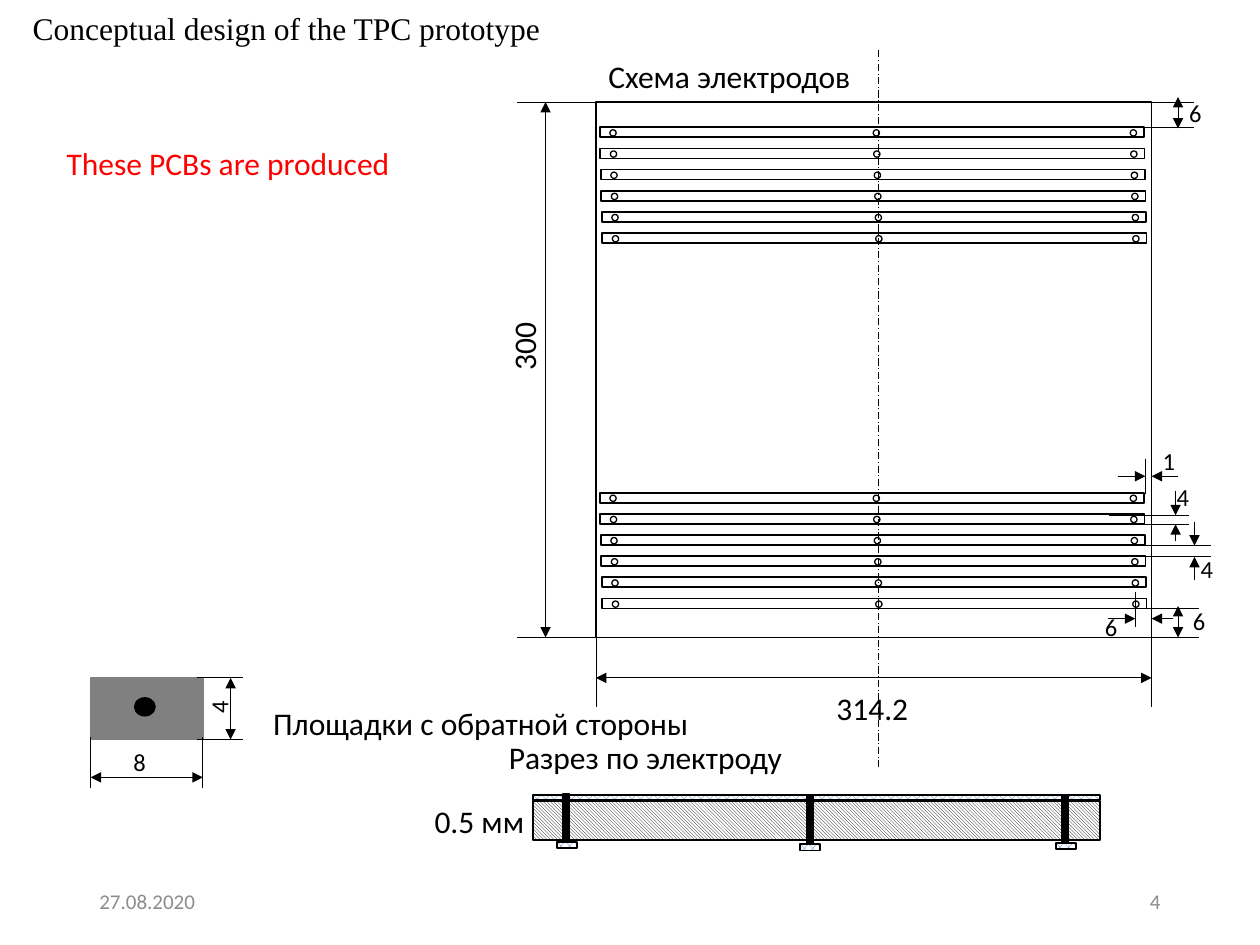
from lxml.etree import SubElement
from pptx import Presentation
from pptx.dml.color import RGBColor
from pptx.enum.dml import MSO_LINE, MSO_PATTERN
from pptx.enum.shapes import MSO_CONNECTOR, MSO_SHAPE
from pptx.enum.text import MSO_ANCHOR, MSO_AUTO_SIZE, PP_ALIGN
from pptx.oxml.ns import qn
from pptx.util import Inches, Pt

COLORS = {"ink": "000000", "paper": "FFFFFF", "copper": "4472C4",
          "pad": "808080", "note": "FF0000", "muted": "8C8C8C"}
ENDS = {"": (), "to": ("a:tailEnd",), "both": ("a:headEnd", "a:tailEnd")}
STRIPES = (MSO_PATTERN.DARK_DOWNWARD_DIAGONAL, "ink")
DOTS = (MSO_PATTERN.PERCENT_50, "copper")


def rgb(name):
    return RGBColor.from_string(COLORS[name])


def add_shape(s, x, y, w, h, kind=MSO_SHAPE.RECTANGLE, fill=None, pattern=None,
              line="ink", weight=1):
    sp = s.shapes.add_shape(kind, Inches(x), Inches(y), Inches(w), Inches(h))
    sp.shadow.inherit = False
    if pattern:
        sp.fill.patterned()
        sp.fill.pattern = pattern[0]
        sp.fill.fore_color.rgb = rgb(pattern[1])
        sp.fill.back_color.rgb = rgb("paper")
    elif fill:
        sp.fill.solid()
        sp.fill.fore_color.rgb = rgb(fill)
    else:
        sp.fill.background()
    sp.line.color.rgb = rgb(line)
    sp.line.width = Pt(weight)
    return sp


def add_line(s, x1, y1, x2, y2, arrows="", dash=None):
    c = s.shapes.add_connector(MSO_CONNECTOR.STRAIGHT, Inches(x1), Inches(y1),
                               Inches(x2), Inches(y2))
    c.line.color.rgb = rgb("ink")
    c.line.width = Pt(0.5)
    if dash:
        c.line.dash_style = dash
    for end in ENDS[arrows]:
        SubElement(c.line._get_or_add_ln(), qn(end), type="triangle")
    SubElement(c._element.spPr, qn("a:effectLst"))


def set_text(sp, text, size, color, font="Calibri", align=PP_ALIGN.LEFT,
             anchor=MSO_ANCHOR.TOP, wrap=False):
    tf = sp.text_frame
    tf.text = text
    tf.word_wrap = wrap
    tf.auto_size = MSO_AUTO_SIZE.NONE
    tf.vertical_anchor = anchor
    p = tf.paragraphs[0]
    p.alignment = align
    p.font.size = Pt(size)
    p.font.name = font
    p.font.color.rgb = rgb(color)


def add_text(s, text, x, y, w=0.3, h=0.34, size=14, color="ink", turn=0, **kw):
    sp = s.shapes.add_textbox(Inches(x), Inches(y), Inches(w), Inches(h))
    sp.rotation = turn
    set_text(sp, text, size, color, **kw)


def add_caption(s, text, x, y, w, **kw):
    add_text(s, text, x, y, w, 0.4, size=18, **kw)


def add_title(s, x, y, w, h):
    sp = s.shapes.title
    sp.left, sp.top, sp.width, sp.height = map(Inches, (x, y, w, h))
    set_text(sp, "Conceptual design of the TPC prototype", 18, "ink",
             font="Times New Roman")


def add_electrodes(s, x, y, count=6):
    for i in range(count):
        left, top = x + 0.004 * i, y + 0.84 / 5 * i
        add_shape(s, left, top, 4.32, 0.08)
        for dx in (0.08, 2.17, 4.21):
            add_shape(s, left + dx, top + 0.02, 0.05, 0.05, MSO_SHAPE.OVAL,
                      weight=0.75)


def add_board(s, x, y, w, h):
    add_shape(s, x, y, w, h)
    for dy in (0.2, 3.1):
        add_electrodes(s, x + 0.03, y + dy)

    for dy in (0, h):
        add_line(s, x + 0.16, y + dy, x - 0.63, y + dy)
    for dx in (0, w):
        add_line(s, x + dx, y + 3.9, x + dx, y + 4.8)
    add_line(s, x, y + 4.57, x + w, y + 4.57, "both")
    add_line(s, x - 0.4, y, x - 0.4, y + h, "both")

    for left, right, top, bottom in ((3.86, 4.75, 0, 0.2), (3.91, 4.79, 4.02, h)):
        for dy in (top, bottom):
            add_line(s, x + left, y + dy, x + right, y + dy)
    for top in (-0.04, 4):
        add_line(s, x + 4.62, y + top, x + 4.62, y + top + 0.25, "both")

    for edge, top, start, end in ((4.36, 2.83, 4.14, 4.62), (4.28, 3.89, 4.06, 4.58)):
        mid = y + top + (0.14 if edge > 4.3 else 0.21)
        add_line(s, x + edge, y + top, x + edge, y + top + 0.28)
        add_line(s, x + start, mid, x + edge, mid, "to")
        add_line(s, x + end, mid, x + w, mid, "to")

    for left, right, at, top, bottom, tail in ((4.07, 4.71, 4.6, 3.28, 3.35, 0.13),
                                               (3.99, 4.88, 4.75, 3.52, 3.61, 0.18)):
        for dy in (top, bottom):
            add_line(s, x + left, y + dy, x + right, y + dy)
        add_line(s, x + at, y + top - 0.19, x + at, y + top, "to")
        add_line(s, x + at, y + bottom + tail, x + at, y + bottom, "to")
    add_line(s, x + 2.24, y + 5.28, x + 2.24, y - 0.41, dash=MSO_LINE.LONG_DASH_DOT)

    for text, dx, dy in (("6", 4.61, -0.08), ("6", 4.64, 3.95), ("1", 4.4, 2.68),
                         ("6", 3.94, 4), ("4", 4.7, 3.54), ("4", 4.51, 2.97)):
        add_text(s, text, x + dx, y + dy)
    add_caption(s, "300", x - 0.87, y + 1.73, 0.59, turn=270)
    add_caption(s, "314.2", x + 1.81, y + 4.61, 0.78)
    add_caption(s, "Схема электродов", x, y - 0.41, 2.14)


def add_section(s, x, y, w, h):
    add_shape(s, x, y + 0.05, w, h - 0.05, pattern=STRIPES)
    add_shape(s, x, y, w, 0.04, pattern=DOTS)
    for dx, dy in ((0.24, -0.01), (2.17, 0.01), (4.2, 0)):
        add_shape(s, x + dx, y + dy, 0.05, 0.38, fill="ink")
        add_shape(s, x + dx - 0.05, y + dy + 0.38, 0.16, 0.05, pattern=DOTS)
    add_caption(s, "Разрез по электроду", x - 0.29, y - 0.5, 2.4)
    add_caption(s, "0.5 мм", x - 0.88, y + 0.01, 0.92)


def add_pad(s, x, y, w, h):
    add_shape(s, x, y, w, h, fill="pad", line="pad")
    add_shape(s, x + 0.35, y + 0.16, 0.16, 0.14, MSO_SHAPE.OVAL, fill="ink")
    for dx in (0, w):
        add_line(s, x + dx, y + 0.47, x + dx, y + 0.87)
    for dy in (0, h):
        add_line(s, x + 0.84, y + dy, x + 1.21, y + dy)
    add_line(s, x, y + 0.79, x + w, y + 0.79, "both")
    add_line(s, x + 1.11, y, x + 1.11, y + h, "both")
    add_text(s, "8", x + 0.24, y + 0.5)
    add_text(s, "4", x + 0.87, y + 0.06, turn=270)
    add_caption(s, "Площадки с обратной стороны", x + 1.35, y + 0.16, 3.54)


def add_footer(s, x, y, w, h):
    for text, left, align in (("27.08.2020", x, PP_ALIGN.LEFT),
                              ("4", x + w - 2.25, PP_ALIGN.RIGHT)):
        add_text(s, text, left, y, 2.25, h, size=12, color="muted", align=align,
                 anchor=MSO_ANCHOR.MIDDLE, wrap=True)


def main():
    prs = Presentation()
    prs.slide_width, prs.slide_height = Inches(10), Inches(7.5)
    s = prs.slides.add_slide(prs.slide_layouts[5])
    add_title(s, 0.16, 0.02, 4.27, 0.4)
    add_caption(s, "These PCBs are produced", 0.43, 1.09, 2.8, color="note")
    add_board(s, 4.73, 0.81, 4.41, 4.25)
    add_section(s, 4.23, 6.31, 4.5, 0.36)
    add_pad(s, 0.72, 5.38, 0.89, 0.49)
    add_footer(s, 0.69, 6.95, 8.62, 0.4)
    prs.save("out.pptx")


if __name__ == "__main__":
    main()
